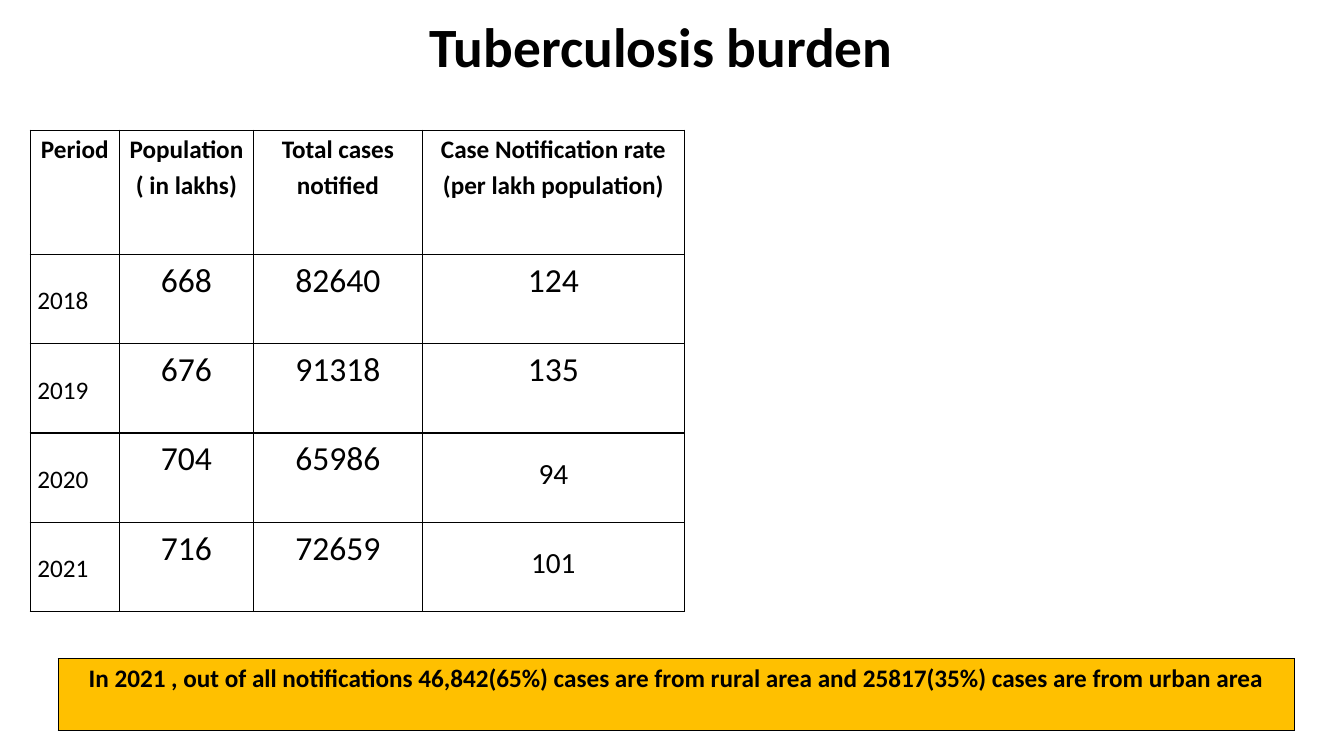
from dataclasses import dataclass
from typing import Optional

from lxml.etree import SubElement
from pptx import Presentation
from pptx.dml.color import RGBColor
from pptx.enum.text import MSO_ANCHOR as Anchor, PP_ALIGN as Align
from pptx.oxml.ns import qn
from pptx.util import Cm, Pt

COLORS = {"text": "000000", "paper": "FFFFFF", "note": "FFC000", "border": "000000"}
FONT = "Calibri"


@dataclass(frozen=True)
class CellStyle:
    size: float
    bold: bool = False
    align: Align = Align.CENTER
    anchor: Anchor = Anchor.TOP
    spacing: float = 1.15
    fill: str = "paper"
    margins: tuple[float, float] = (0.18, 0)
    baseline: Optional[int] = None


HEADER = CellStyle(18, bold=True)
YEAR = CellStyle(18, align=Align.JUSTIFY, anchor=Anchor.MIDDLE)
VALUE = CellStyle(24)
RAISED = CellStyle(36, anchor=Anchor.MIDDLE, baseline=30000)
NOTE = CellStyle(18, bold=True, spacing=1.0, fill="note", margins=(0.25, 0.13))

Entry = tuple[str, CellStyle]


def add_run(p, text: str, size: float, bold: bool):
    r = p.add_run()
    r.text = text
    r.font.name, r.font.size, r.font.bold = FONT, Pt(size), bold
    r.font.color.rgb = RGBColor.from_string(COLORS["text"])
    return r


def set_borders(cell) -> None:
    props = cell._tc.get_or_add_tcPr()
    for position, side in enumerate(("lnL", "lnR", "lnT", "lnB")):
        line = SubElement(props, qn(f"a:{side}"), w=str(Pt(1)))
        fill = SubElement(line, qn("a:solidFill"))
        SubElement(fill, qn("a:srgbClr"), val=COLORS["border"])
        props.insert(position, line)


def fill_cell(cell, text: str, style: CellStyle) -> None:
    cell.fill.solid()
    cell.fill.fore_color.rgb = RGBColor.from_string(COLORS[style.fill])
    set_borders(cell)
    cell.vertical_anchor = style.anchor
    cell.margin_left = cell.margin_right = Cm(style.margins[0])
    cell.margin_top = cell.margin_bottom = Cm(style.margins[1])
    p = cell.text_frame.paragraphs[0]
    p.alignment, p.line_spacing = style.align, style.spacing
    r = add_run(p, text, style.size, style.bold)
    if style.baseline is not None:
        r.font._element.set("baseline", str(style.baseline))


def add_grid(s, left: float, top: float, widths: list[float],
             heights: list[float], rows: list[list[Entry]]) -> None:
    frame = s.shapes.add_table(len(heights), len(widths), Cm(left), Cm(top),
                               Cm(sum(widths)), Cm(sum(heights)))
    table = frame.table
    table.first_row = table.horz_banding = False
    for column, width in zip(table.columns, widths):
        column.width = Cm(width)
    for i, (height, entries) in enumerate(zip(heights, rows)):
        table.rows[i].height = Cm(height)
        for j, (text, style) in enumerate(entries):
            fill_cell(table.cell(i, j), text, style)


def add_title(s, text: str) -> None:
    sp = s.shapes.add_textbox(Cm(1.47), Cm(0.5), Cm(30.05), Cm(1.52))
    tf = sp.text_frame
    tf.word_wrap = True
    tf.vertical_anchor = Anchor.MIDDLE
    tf.margin_left = Cm(9.35)
    p = tf.paragraphs[0]
    p.line_spacing = 0.9
    add_run(p, text, 39.6, True)


def main() -> None:
    prs = Presentation()
    prs.slide_width, prs.slide_height = Cm(33.87), Cm(19.05)
    s = prs.slides.add_slide(prs.slide_layouts[6])

    add_title(s, "Tuberculosis burden")

    # Yearly notifications
    headings = ["Period", "Population ( in lakhs)", "Total cases notified",
                "Case Notification rate (per lakh population)"]
    years = [
        ("2018", "668", "82640", "124", VALUE),
        ("2019", "676", "91318", "135", VALUE),
        ("2020", "704", "65986", "94", RAISED),
        ("2021", "716", "72659", "101", RAISED),
    ]
    rows = [[(heading, HEADER) for heading in headings]]
    for year, population, cases, rate, rate_style in years:
        rows.append([(year, YEAR), (population, VALUE), (cases, VALUE),
                     (rate, rate_style)])
    add_grid(s, 0.76, 3.28, [2.25, 3.38, 4.25, 6.61],
             [3.13] + [2.25] * len(years), rows)

    # Rural and urban split
    add_grid(s, 1.47, 16.6, [31.15], [1.8], [[(
        "In 2021 , out of all notifications 46,842(65%) cases are from rural area "
        "and 25817(35%) cases are from urban area", NOTE)]])

    prs.save("out.pptx")


if __name__ == "__main__":
    main()
